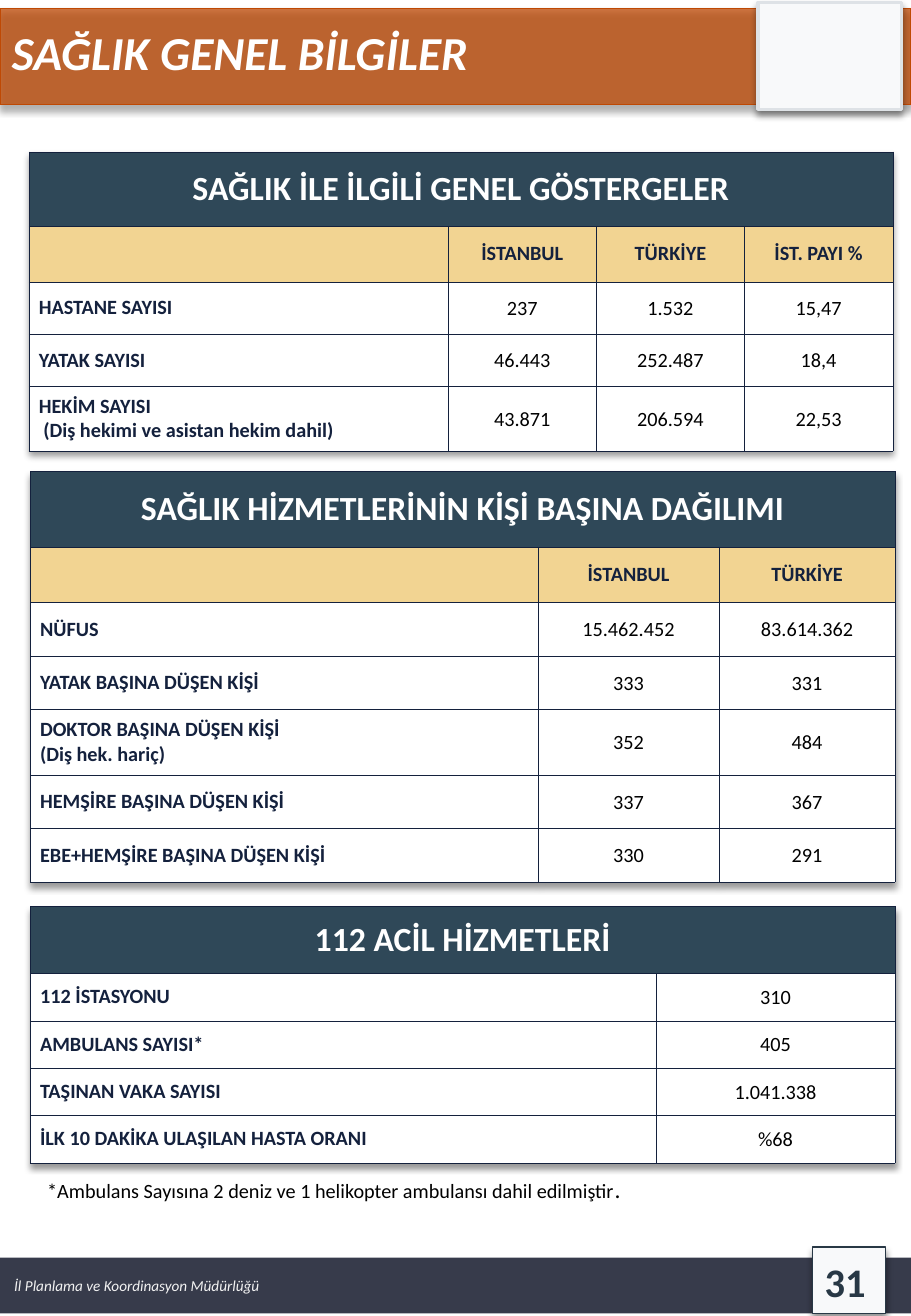
from lxml import etree
from pptx import Presentation
from pptx.dml.color import RGBColor
from pptx.enum.shapes import MSO_SHAPE
from pptx.enum.text import MSO_ANCHOR, PP_ALIGN
from pptx.oxml.ns import qn
from pptx.util import Inches, Pt

RECT = MSO_SHAPE.RECTANGLE
LEFT, CENTER = PP_ALIGN.LEFT, PP_ALIGN.CENTER
TOP, MIDDLE = MSO_ANCHOR.TOP, MSO_ANCHOR.MIDDLE
NAVY, TEAL, SAND, WHITE, BLACK = "14213D", "2F4858", "F2D492", "FFFFFF", "000000"
PALE, SLATE, ORANGE = "F8F9FA", "283845", "BF4904"


def rgb(value):
    return RGBColor.from_string(value)


def child(parent, tag, **attrs):
    return etree.SubElement(parent, qn(tag), {k: str(v) for k, v in attrs.items()})


def add_shadow(props):
    for old in props.findall(qn("a:effectLst")):
        props.remove(old)
    effects = child(props, "a:effectLst")
    shadow = child(effects, "a:outerShdw", blurRad=Pt(4), dist=Pt(3),
                   dir=5400000, algn="t", rotWithShape=0)
    color = child(shadow, "a:srgbClr", val=BLACK)
    child(color, "a:alpha", val=40000)


class Page:
    font = "Calibri"

    def __init__(self, prs):
        self.slide = prs.slides.add_slide(prs.slide_layouts[6])

    def box(self, x, y, w, h, fill, alpha=100, line=None, weight=1):
        sp = self.slide.shapes.add_shape(RECT, Inches(x), Inches(y), Inches(w), Inches(h))
        sp.shadow.inherit = False
        sp.fill.solid()
        sp.fill.fore_color.rgb = rgb(fill)
        if alpha < 100:
            color = sp._element.spPr.find(qn("a:solidFill"))[0]
            child(color, "a:alpha", val=alpha * 1000)
        if line:
            sp.line.color.rgb = rgb(line)
            sp.line.width = Pt(weight)
            add_shadow(sp._element.spPr)
        else:
            sp.line.fill.background()

    def run(self, p, text, size, color, bold=False, italic=False):
        r = p.add_run()
        r.text = text
        r.font.name = self.font
        r.font.size = Pt(size)
        r.font.color.rgb = rgb(color)
        r.font.bold = bold
        r.font.italic = italic

    def text(self, x, y, w, h, runs, color, bold=False, italic=False,
             align=LEFT, anchor=TOP, wrap=True):
        tf = self.slide.shapes.add_textbox(Inches(x), Inches(y), Inches(w), Inches(h)).text_frame
        tf.word_wrap = wrap
        tf.vertical_anchor = anchor
        p = tf.paragraphs[0]
        p.alignment = align
        for text, size in runs:
            self.run(p, text, size, color, bold, italic)

    def cell(self, cell, text, size, color, fill, bold=True, align=LEFT, tight=False):
        side, top, bottom = (0.01, 0.01, 0) if tight else (0.08, 0.04, 0.04)
        cell.margin_left = cell.margin_right = Inches(side)
        cell.margin_top, cell.margin_bottom = Inches(top), Inches(bottom)
        cell.vertical_anchor = MIDDLE
        props = cell._tc.get_or_add_tcPr()
        for edge in "LRTB":
            ln = child(props, "a:ln" + edge, w=Pt(0.25))
            child(child(ln, "a:solidFill"), "a:srgbClr", val=NAVY)
        cell.fill.solid()
        cell.fill.fore_color.rgb = rgb(fill)
        tf = cell.text_frame
        for i, line in enumerate(text.split("\n") if text else []):
            p = tf.add_paragraph() if i else tf.paragraphs[0]
            p.alignment = align
            self.run(p, line, size, color, bold)

    def table(self, x, y, cols, heights, title, rows, header=None):
        body = ([header] if header else []) + rows
        table = self.slide.shapes.add_table(
            len(heights), len(cols), Inches(x), Inches(y),
            Inches(sum(cols)), Inches(sum(heights))).table
        table.first_row = table.horz_banding = False
        add_shadow(table._tbl.tblPr)
        for column, w in zip(table.columns, cols):
            column.width = Inches(w)
        for row, h in zip(table.rows, heights):
            row.height = Inches(h)
        for c in range(len(cols)):
            self.cell(table.cell(0, c), "" if c else title, 20, WHITE, TEAL, align=CENTER)
        table.cell(0, 0).merge(table.cell(0, len(cols) - 1))
        for r, values in enumerate(body, 1):
            for c, value in enumerate(values):
                target = table.cell(r, c)
                if values is header:
                    self.cell(target, value, 12, NAVY, SAND, align=CENTER)
                elif c == 0:
                    self.cell(target, value, 12, NAVY, WHITE)
                else:
                    self.cell(target, value, 12, BLACK, WHITE, False, CENTER, True)


def main():
    prs = Presentation()
    prs.slide_width, prs.slide_height = Inches(7.5), Inches(10.83)
    page = Page(prs)

    page.box(0, 10.35, 7.5, 0.46, "2D3142", alpha=95)
    page.text(0, 10.45, 2.25, 0.25, [("İl Planlama ve Koordinasyon Müdürlüğü", 9)],
              "F2F2F2", italic=True, align=CENTER, wrap=False)
    page.box(0, 0.07, 7.5, 0.79, ORANGE, alpha=75, line=ORANGE)
    page.box(6.24, 0.02, 1.18, 0.88, PALE, line="DEE2E6", weight=2)
    page.box(6.69, 10.26, 0.6, 0.55, PALE, line=SLATE)
    page.text(6.69, 10.33, 0.75, 0.42, [("31", 24)], SLATE, bold=True, anchor=MIDDLE)

    page.table(0.24, 1.25, [3.45, 1.22, 1.22, 1.22], [0.61, 0.46, 0.43, 0.43, 0.53],
               "SAĞLIK İLE İLGİLİ GENEL GÖSTERGELER",
               [["HASTANE SAYISI", "237", "1.532", "15,47"],
                ["YATAK SAYISI", "46.443", "252.487", "18,4"],
                ["HEKİM SAYISI\n (Diş hekimi ve asistan hekim dahil)",
                 "43.871", "206.594", "22,53"]],
               header=["", "İSTANBUL", "TÜRKİYE", "İST. PAYI %"])
    page.table(0.25, 3.88, [4.18, 1.49, 1.45], [0.62, 0.46, 0.44, 0.44, 0.54, 0.44, 0.44],
               "SAĞLIK HİZMETLERİNİN KİŞİ BAŞINA DAĞILIMI",
               [["NÜFUS", "15.462.452", "83.614.362"],
                ["YATAK BAŞINA DÜŞEN KİŞİ", "333", "331"],
                ["DOKTOR BAŞINA DÜŞEN KİŞİ\n(Diş hek. hariç)", "352", "484"],
                ["HEMŞİRE BAŞINA DÜŞEN KİŞİ", "337", "367"],
                ["EBE+HEMŞİRE BAŞINA DÜŞEN KİŞİ", "330", "291"]],
               header=["", "İSTANBUL", "TÜRKİYE"])
    page.table(0.25, 7.46, [5.15, 1.97], [0.55] + [0.39] * 4,
               "112 ACİL HİZMETLERİ",
               [["112 İSTASYONU", "310"],
                ["AMBULANS SAYISI*", "405"],
                ["TAŞINAN VAKA SAYISI", "1.041.338"],
                ["İLK 10 DAKİKA ULAŞILAN HASTA ORANI", "%68"]])

    page.text(0.29, 9.62, 6.93, 0.34,
              [("*Ambulans Sayısına 2 deniz ve 1 helikopter ambulansı dahil edilmiştir", 12),
               (".", 14)], BLACK)
    page.text(0, 0.14, 7.5, 0.57, [("SAĞLIK GENEL BİLGİLER", 28)], WHITE,
              bold=True, italic=True)
    prs.save("out.pptx")


if __name__ == "__main__":
    main()
